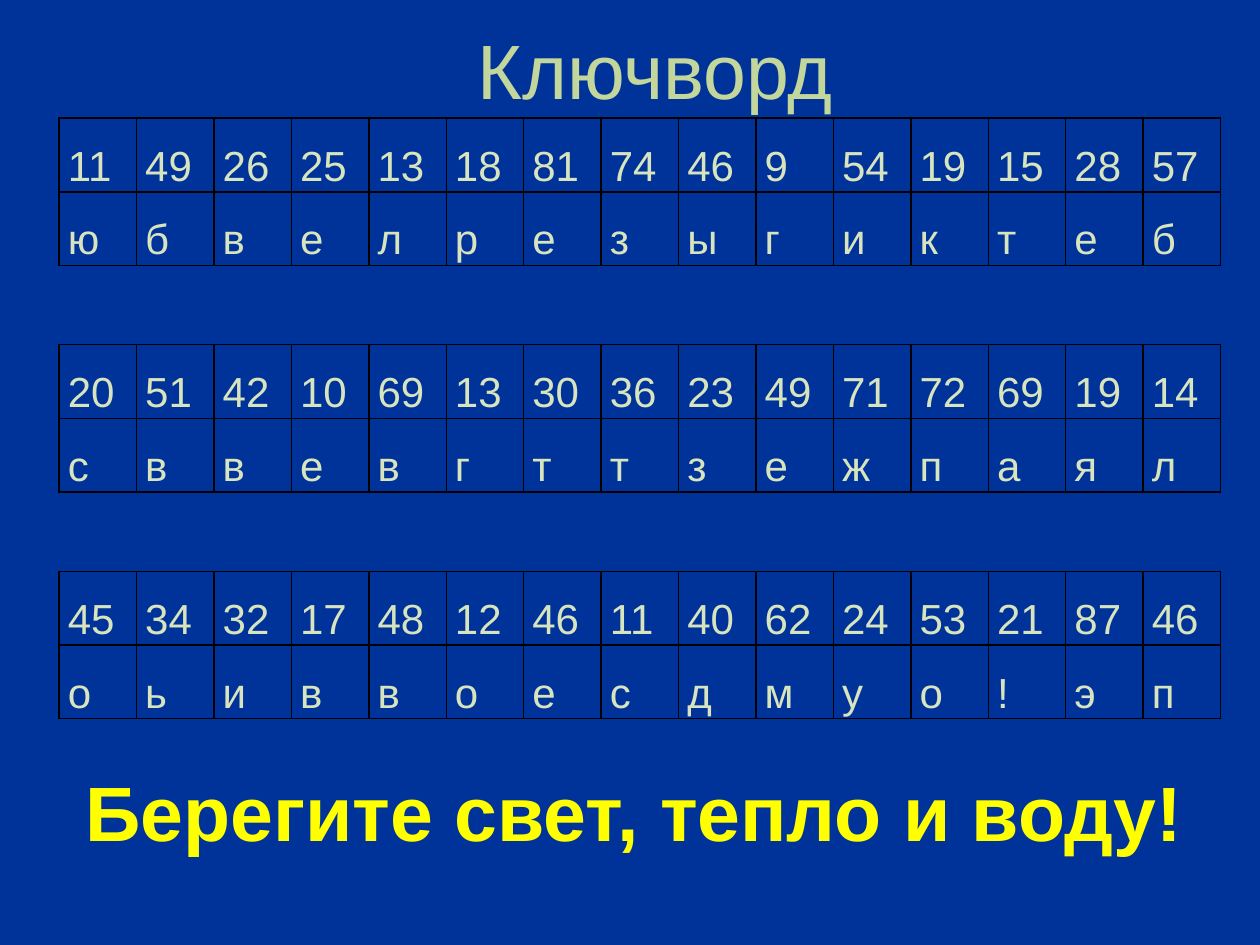
from dataclasses import dataclass

from lxml.etree import SubElement
from pptx import Presentation
from pptx.dml.color import RGBColor as RGB
from pptx.enum.text import MSO_ANCHOR as Anchor, MSO_AUTO_SIZE as Fit, PP_ALIGN as Align
from pptx.oxml.ns import qn
from pptx.util import Pt


@dataclass(frozen=True)
class Theme:
    """Colours, font and type sizes of the slide."""
    back: str = "003399"
    title: str = "C3D69B"
    cell: str = "D7E4BD"
    edge: str = "F2F2F2"
    grid: str = "000000"
    answer: str = "FFFF00"
    font: str = "Arial"
    large: int = 44
    small: int = 24


THEME = Theme()
BLOCKS = [
    ("11 49 26 25 13 18 81 74 46 9 54 19 15 28 57", "ю б в е л р е з ы г и к т е б"),
    ("20 51 42 10 69 13 30 36 23 49 71 72 69 19 14", "с в в е в г т т з е ж п а я л"),
    ("45 34 32 17 48 12 46 11 40 62 24 53 21 87 46", "о ь и в в о е с д м у о ! э п"),
]


def style(item, values):
    """Set each named attribute of an item."""
    for name, value in values.items():
        setattr(item, name, value)


def write(par, text, size, color, bold=False):
    """Add one formatted run to a paragraph and return it."""
    run = par.add_run()
    run.text = text
    style(run.font, {"name": THEME.font, "size": Pt(size), "bold": bold})
    run.font.color.rgb = RGB.from_string(color)
    return run


def stroke(parent, tag, width, color):
    """Add a line element, empty when the colour is None."""
    line = SubElement(parent, qn(tag), w=str(Pt(width)))
    if color:
        fill = SubElement(line, qn("a:solidFill"))
        SubElement(fill, qn("a:srgbClr"), val=color)
    else:
        SubElement(line, qn("a:noFill"))
    return line


def add_line(slide, box, text, color, anchor, fit, bold=False):
    """Place one centred line of large text in a box."""
    frame = slide.shapes.add_textbox(*map(Pt, box)).text_frame
    style(frame, {"word_wrap": True, "auto_size": fit, "vertical_anchor": anchor})
    par = frame.paragraphs[0]
    par.alignment = Align.CENTER
    write(par, text, THEME.large, color, bold)


def fill_cell(cell, text):
    """Write a number or letter in a bordered cell, or leave an open gap."""
    side = THEME.grid if text else None
    props = cell._tc.get_or_add_tcPr()
    for tag, color in (("a:lnL", side), ("a:lnR", side),
                       ("a:lnT", THEME.grid), ("a:lnB", THEME.grid)):
        stroke(props, tag, 1, color)
    cell.fill.background()
    if not text:
        return
    style(cell, {"margin_left": Pt(5), "margin_right": Pt(5), "margin_top": 0,
                 "margin_bottom": 0, "vertical_anchor": Anchor.MIDDLE})
    par = cell.text_frame.paragraphs[0]
    style(par, {"alignment": Align.JUSTIFY, "line_spacing": 1.5})
    run = write(par, text, THEME.small, THEME.cell)
    mark = run.font._element
    mark.insert(0, stroke(mark, "a:ln", 0.75, THEME.edge))


def add_grid(slide, box, blocks, gap):
    """Place the number and letter blocks as one table with gap rows."""
    left, top, width, height = box
    rows = []
    for block in blocks:
        if rows:
            rows.append(None)
        rows += [line.split() for line in block]
    count = len(rows[0])
    gaps = rows.count(None)
    step = (height - gaps * gap) / (len(rows) - gaps)
    table = slide.shapes.add_table(len(rows), count, *map(Pt, box)).table
    style(table, {"first_row": False, "horz_banding": False})
    for col in table.columns:
        col.width = Pt(width / count)
    for row, words in zip(table.rows, rows):
        row.height = Pt(step if words else gap)
        for cell, text in zip(row.cells, words or [""] * count):
            fill_cell(cell, text)


def build_slide(deck):
    """Build the keyword puzzle slide."""
    slide = deck.slides.add_slide(deck.slide_layouts[6])
    fill = slide.background.fill
    fill.solid()
    fill.fore_color.rgb = RGB.from_string(THEME.back)
    add_line(slide, (50.4, 0, 648, 78.5), "Ключворд", THEME.title, Anchor.MIDDLE, Fit.NONE)
    add_grid(slide, (33.75, 67.5, 663.9, 343.2), BLOCKS, 45.3)
    add_line(slide, (28, 433.4, 669.6, 60.5), "Берегите свет, тепло и воду!",
             THEME.answer, Anchor.TOP, Fit.SHAPE_TO_FIT_TEXT, True)


def main():
    """Create the deck and save it."""
    deck = Presentation()
    style(deck, {"slide_width": Pt(720), "slide_height": Pt(540)})
    build_slide(deck)
    deck.save("out.pptx")


if __name__ == "__main__":
    main()
